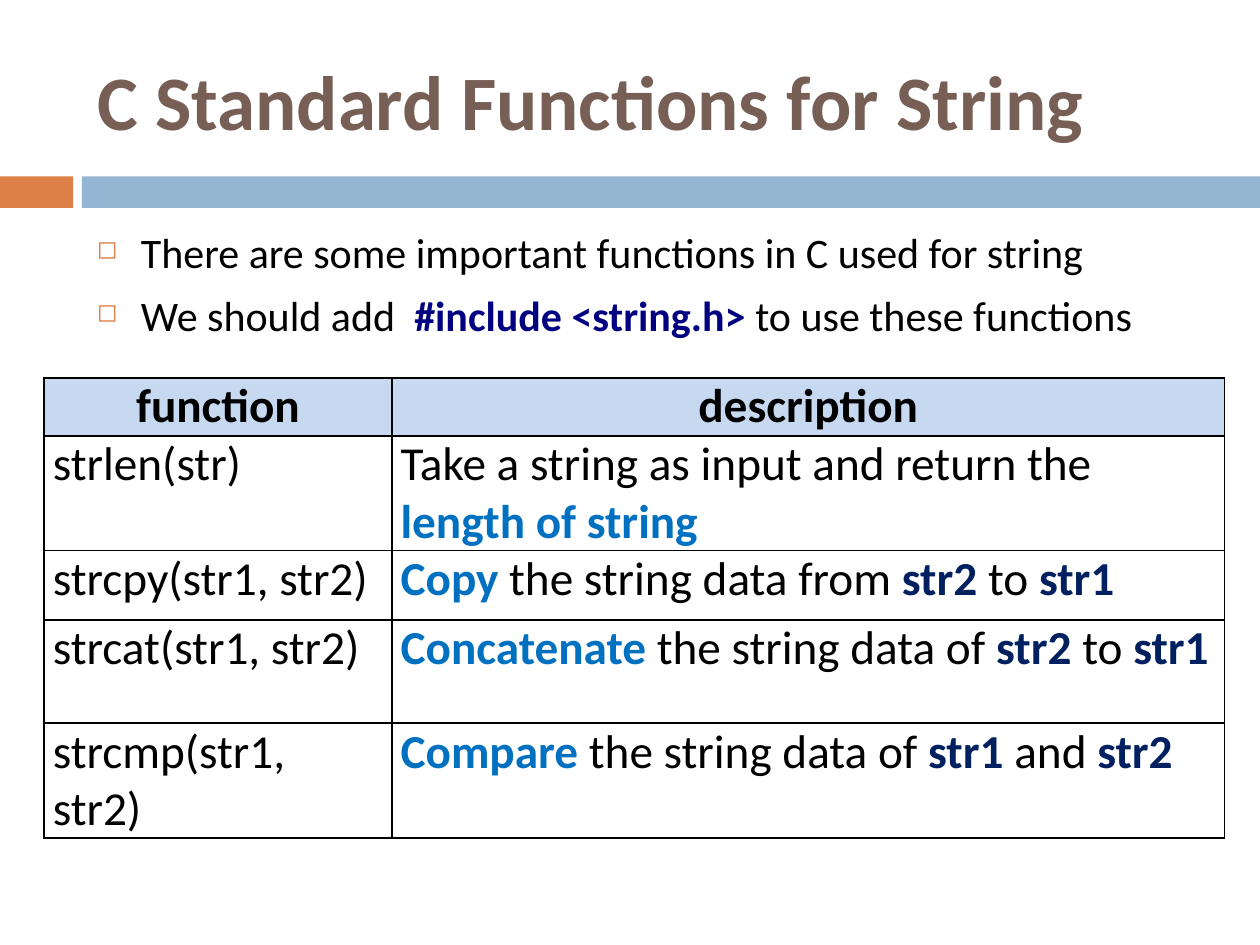
import pptx
import pptx.dml.color
import pptx.enum.shapes
import pptx.enum.text
import pptx.oxml
import pptx.oxml.ns
import pptx.util
from pptx.util import Inches

THEME = {
    "font": "Calibri",
    "title": "775F55", "orange": "DD8047", "blue": "94B6D2",
    "text": "000000", "include": "000080", "header": "C6D9F1",
    "action": "0070C0", "argument": "002060", "border": "000000",
    "title_size": 44, "bullet_size": 24, "table_size": 27,
}
LEFT = pptx.enum.text.PP_ALIGN.LEFT
CENTER = pptx.enum.text.PP_ALIGN.CENTER


def color(name):
    return pptx.dml.color.RGBColor.from_string(THEME[name])


def add_runs(paragraph, runs, size):
    """Add (text, colour name, bold) runs to a paragraph."""
    for text, tone, bold in runs:
        run = paragraph.add_run()
        run.text = text
        run.font.name = THEME["font"]
        run.font.size = pptx.util.Pt(THEME[size])
        run.font.bold = bold
        run.font.color.rgb = color(tone)


deck = pptx.Presentation()
deck.slide_width, deck.slide_height = Inches(10), Inches(7.5)
slide = deck.slides.add_slide(deck.slide_layouts[5])

# Two-coloured band under the title
for left, width, tone in [(0, 0.58, "orange"), (0.65, 9.35, "blue")]:
    band = slide.shapes.add_shape(
        pptx.enum.shapes.MSO_SHAPE.RECTANGLE,
        Inches(left), Inches(1.4), Inches(width), Inches(0.25))
    band.shadow.inherit = False
    band.fill.solid()
    band.fill.fore_color.rgb = color(tone)
    band.line.fill.background()

# Title
title = slide.shapes.title
title.left, title.top = Inches(0.67), Inches(0.25)
title.width, title.height = Inches(8.92), Inches(1.08)
title.text_frame.auto_size = pptx.enum.text.MSO_AUTO_SIZE.NONE
title.text_frame.vertical_anchor = pptx.enum.text.MSO_ANCHOR.MIDDLE
heading = title.text_frame.paragraphs[0]
heading.alignment = LEFT
add_runs(heading, [("C Standard Functions for String", "title", True)], "title_size")

# Introductory bullets
points = [
    [("There are some important functions in C used for string", "text", False)],
    [("We should add  ", "text", False),
     ("#include <string.h> ", "include", True),
     ("to use these functions", "text", False)],
]
intro = slide.shapes.add_textbox(
    Inches(0.67), Inches(1.75), Inches(8.92), Inches(4.92)).text_frame
intro.word_wrap = True
for index, runs in enumerate(points):
    point = intro.add_paragraph() if index else intro.paragraphs[0]
    point.space_before = pptx.util.Pt(7)
    add_runs(point, runs, "bullet_size")
    properties = point._p.get_or_add_pPr()
    properties.set("marL", str(Inches(0.35)))
    properties.set("indent", str(-Inches(0.35)))
    for xml in (f'<a:buClr %s><a:srgbClr val="{THEME["orange"]}"/></a:buClr>',
                '<a:buSzPct %s val="60000"/>',
                '<a:buChar %s char="◻"/>'):
        properties.append(pptx.oxml.parse_xml(xml % pptx.oxml.ns.nsdecls("a")))

# Function table
rows = [
    ([("function", "text", True)], [("description", "text", True)]),
    ([("strlen(str)", "text", False)],
     [("Take a string as input and return the ", "text", False),
      ("length of string", "action", True)]),
]
for name, action, link, first, joint, second in [
        ("strcpy", "Copy", " the string data from ", "str2", " to ", "str1"),
        ("strcat", "Concatenate", " the string data of ", "str2", " to ", "str1"),
        ("strcmp", "Compare", " the string data of ", "str1", " and ", "str2")]:
    rows.append((
        [(f"{name}(str1, str2)", "text", False)],
        [(action, "action", True), (link, "text", False),
         (first, "argument", True), (joint, "text", False),
         (second, "argument", True)]))

column_widths = [2.76, 6.61]
row_heights = [0.46, 0.91, 0.55, 0.82, 0.91]
functions = slide.shapes.add_table(
    len(rows), len(column_widths), Inches(0.35), Inches(3),
    Inches(sum(column_widths)), Inches(sum(row_heights))).table
for column, width in zip(functions.columns, column_widths):
    column.width = Inches(width)
for row, height in zip(functions.rows, row_heights):
    row.height = Inches(height)

for r, row in enumerate(rows):
    for c, runs in enumerate(row):
        cell = functions.cell(r, c)
        cell.margin_left = cell.margin_right = Inches(0.07)
        cell.margin_top = cell.margin_bottom = 0
        paragraph = cell.text_frame.paragraphs[0]
        paragraph.alignment = LEFT if r else CENTER
        add_runs(paragraph, runs, "table_size")
        if r:
            cell.fill.background()
        else:
            cell.fill.solid()
            cell.fill.fore_color.rgb = color("header")
        # Borders come before the fill in the cell properties
        properties = cell._tc.get_or_add_tcPr()
        for position, side in enumerate(("lnL", "lnR", "lnT", "lnB")):
            properties.insert(position, pptx.oxml.parse_xml(
                f'<a:{side} {pptx.oxml.ns.nsdecls("a")} w="{pptx.util.Pt(1)}">'
                f'<a:solidFill><a:srgbClr val="{THEME["border"]}"/></a:solidFill>'
                f'</a:{side}>'))

deck.save("out.pptx")
